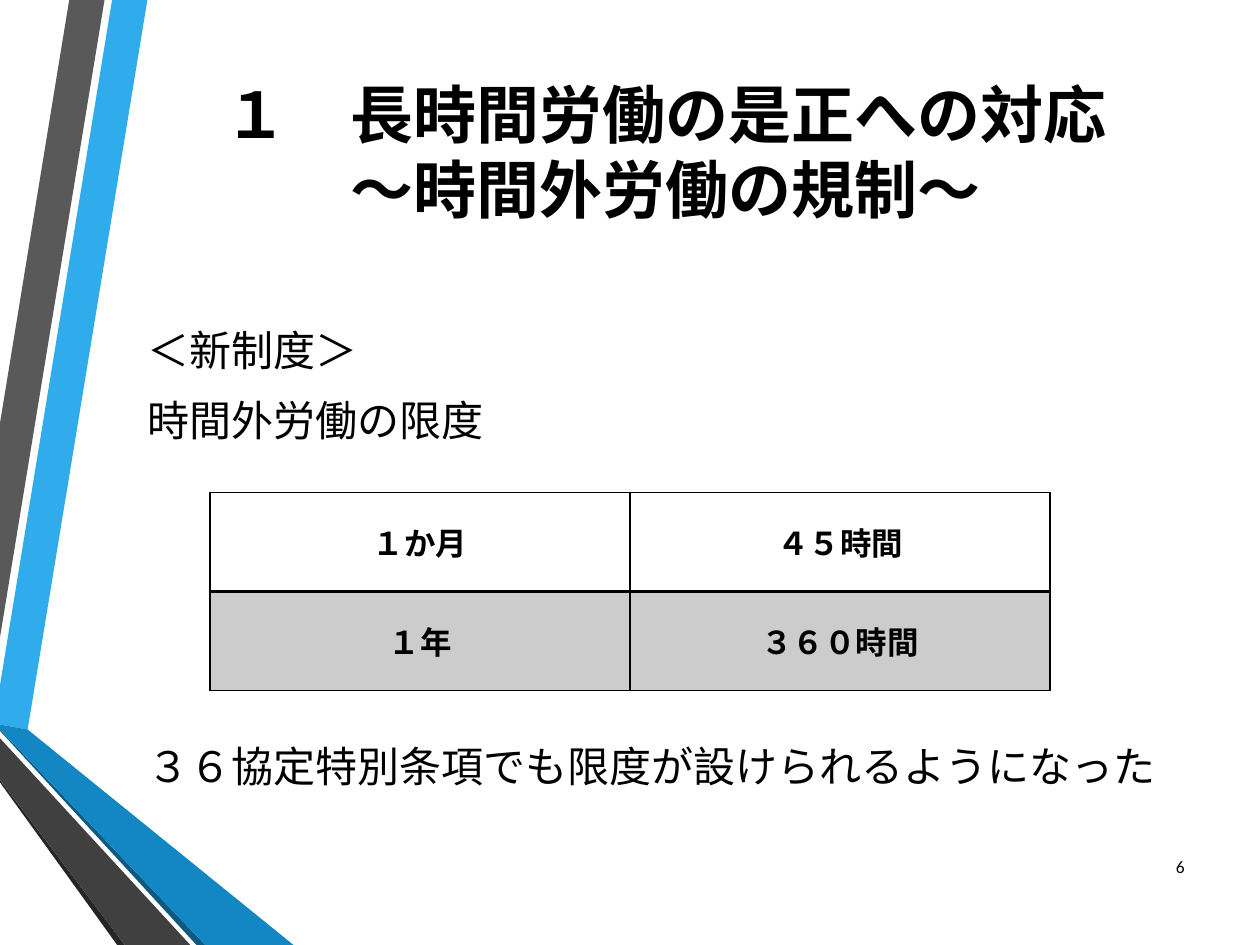
"""Build the slide on overtime limits, laid out on a grid of 100 columns by 75 rows."""
from dataclasses import dataclass

from lxml import etree
from pptx import Presentation
from pptx import util as u
from pptx.dml.color import RGBColor
from pptx.enum import text
from pptx.oxml import ns

COLS, ROWS = 100, 75
WIDTH, HEIGHT = u.Inches(10), u.Inches(7.5)
BLACK = "000000"
CJK = "Noto Sans CJK JP"
LEFT, CENTER, RIGHT = text.PP_ALIGN.LEFT, text.PP_ALIGN.CENTER, text.PP_ALIGN.RIGHT
TOP, MIDDLE = text.MSO_ANCHOR.TOP, text.MSO_ANCHOR.MIDDLE


@dataclass
class Ribbon:
    color: str
    points: list[tuple[float, float]]


@dataclass
class Label:
    box: tuple[float, float, float, float]
    lines: list[str]
    size: float
    pitch: float
    font: str = "Calibri"
    bold: bool = False
    align: text.PP_ALIGN = LEFT
    anchor: text.MSO_ANCHOR = TOP


@dataclass
class Limit:
    cells: tuple[str, str]
    shaded: bool
    bottom: float


RIBBONS = [
    Ribbon("30ACEC", [(0, 54.4), (0, 57.5), (2.2, 57.9), (11.7, 0), (8.9, 0)]),
    Ribbon("595959", [(8.3, 0), (5.5, 0), (0, 33.6), (0, 50.6)]),
    Ribbon("262626", [(0, 61.9), (0, 62.1), (9.3, 75), (9.9, 75)]),
    Ribbon("0C5A82", [(0, 57.9), (0, 58), (15.6, 75), (16.3, 75)]),
    Ribbon("1287C3", [(0, 57.9), (16.3, 75), (23.3, 75), (2.2, 57.9), (0, 57.5)]),
    Ribbon("404040", [(0, 61.9), (9.9, 75), (15.1, 75), (0, 58.6)]),
]
LABELS = [
    Label((10.7, 5.5, 84.3, 14), ["１\u3000長時間労働の是正への対応\v～時間外労働の規制～".replace("\u3000", "　")],
          36, 43, CJK, True, CENTER),
    Label((10.7, 23.7, 84.3, 12.5), ["＜新制度＞", "時間外労働の限度"], 24, 40),
    Label((10.7, 56.7, 84.3, 7), ["３６協定特別条項でも限度が設けられるようになった"], 24, 40),
    Label((90.3, 66.8, 4.7, 4), ["6"], 10, 12, align=RIGHT, anchor=MIDDLE),
]
TABLE_BOX = (16.67, 39.1, 66.67, 15.7)
LIMITS = [
    Limit(("１か月", "４５時間"), False, 2),
    Limit(("１年", "３６０時間"), True, 1),
]


def x(col: float) -> int:
    """Turn grid columns into a length."""
    return round(WIDTH * col / COLS)


def y(row: float) -> int:
    """Turn grid rows into a length."""
    return round(HEIGHT * row / ROWS)


def place(box: tuple[float, float, float, float]) -> tuple[int, int, int, int]:
    """Turn a grid box into left, top, width and height."""
    left, top, width, height = box
    return x(left), y(top), x(width), y(height)


def paint(fill, color: str) -> None:
    """Fill with a solid hex colour."""
    fill.solid()
    fill.fore_color.rgb = RGBColor.from_string(color)


def style(p, size: float, font: str, bold: bool, align: text.PP_ALIGN) -> None:
    """Format a paragraph and its runs."""
    p.alignment = align
    for r in p.runs:
        r.font.size, r.font.name, r.font.bold = u.Pt(size), font, bold
        paint(r.font.fill, BLACK)
        etree.SubElement(r.font._element, ns.qn("a:ea"), typeface=CJK)


def draw_ribbon(s, ribbon: Ribbon) -> None:
    """Draw one closed ribbon outline."""
    start, *rest = [(x(col), y(row)) for col, row in ribbon.points]
    builder = s.shapes.build_freeform(*start)
    builder.add_line_segments(rest, close=True)
    sp = builder.convert_to_shape()
    sp.shadow.inherit = False
    paint(sp.fill, ribbon.color)
    sp.line.fill.background()


def draw_label(s, label: Label) -> None:
    """Draw one text box."""
    tf = s.shapes.add_textbox(*place(label.box)).text_frame
    tf.word_wrap = True
    tf.vertical_anchor = label.anchor
    tf.text = "\n".join(label.lines)
    for p in tf.paragraphs:
        p.line_spacing = u.Pt(label.pitch)
        style(p, label.size, label.font, label.bold, label.align)


def draw_borders(cell, bottom: float) -> None:
    """Give a cell black borders on all four sides."""
    props = cell._tc.get_or_add_tcPr()
    widths = {"lnL": 1, "lnR": 1, "lnT": 1, "lnB": bottom}
    for i, (side, width) in enumerate(widths.items()):
        line = etree.Element(ns.qn(f"a:{side}"), w=str(u.Pt(width)))
        solid = etree.SubElement(line, ns.qn("a:solidFill"))
        etree.SubElement(solid, ns.qn("a:srgbClr"), val=BLACK)
        props.insert(i, line)


def draw_table(s, limits: list[Limit]) -> None:
    """Draw the table of overtime limits."""
    table = s.shapes.add_table(len(limits), 2, *place(TABLE_BOX)).table
    table.first_row = table.horz_banding = False
    for row, limit in enumerate(limits):
        for col, words in enumerate(limit.cells):
            cell = table.cell(row, col)
            cell.text_frame.text = words
            cell.vertical_anchor = MIDDLE
            style(cell.text_frame.paragraphs[0], 18, "Calibri", True, CENTER)
            if limit.shaded:
                paint(cell.fill, BLACK)
                color = cell._tc.tcPr.find(".//" + ns.qn("a:srgbClr"))
                etree.SubElement(color, ns.qn("a:alpha"), val="20000")
            else:
                cell.fill.background()
            draw_borders(cell, limit.bottom)


def main() -> None:
    """Build and save the slide."""
    prs = Presentation()
    prs.slide_width, prs.slide_height = WIDTH, HEIGHT
    s = prs.slides.add_slide(prs.slide_layouts[6])
    for ribbon in RIBBONS:
        draw_ribbon(s, ribbon)
    for label in LABELS:
        draw_label(s, label)
    draw_table(s, LIMITS)
    prs.save("out.pptx")


if __name__ == "__main__":
    main()
